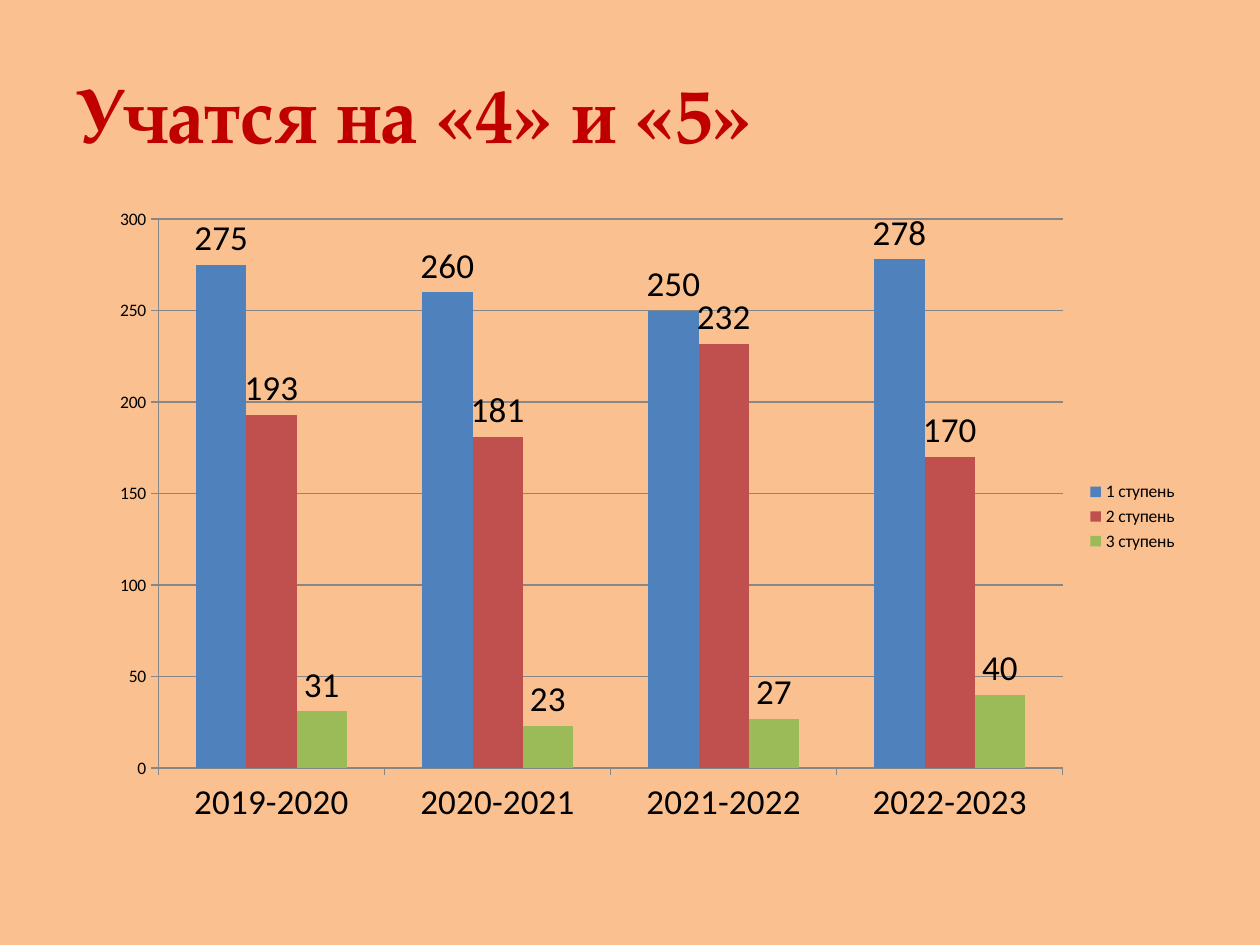
from pptx import Presentation
from pptx.chart.data import CategoryChartData
from pptx.dml.color import RGBColor
from pptx.enum.chart import XL_CHART_TYPE, XL_LABEL_POSITION, XL_LEGEND_POSITION, XL_TICK_MARK
from pptx.enum.text import MSO_ANCHOR, PP_ALIGN
from pptx.util import Inches, Pt

COLORS = {
    "background": "FAC090",
    "title": "C00000",
    "text": "000000",
    "axis": "878787",
}
YEARS = ["2019-2020", "2020-2021", "2021-2022", "2022-2023"]
STAGES = [
    ("1 ступень", [275, 260, 250, 278], "4F81BD"),
    ("2 ступень", [193, 181, 232, 170], "C0504D"),
    ("3 ступень", [31, 23, 27, 40], "9BBB59"),
]


def rgb(name):
    return RGBColor.from_string(COLORS[name])


def set_font(font, name, size, color, bold=False):
    font.name = name
    font.size = Pt(size)
    font.bold = bold
    font.color.rgb = rgb(color)


def place_title(slide, text, left, top, width, height):
    title = slide.shapes.title
    title.left, title.top, title.width, title.height = left, top, width, height
    frame = title.text_frame
    frame.text = text
    frame.word_wrap = True
    frame.vertical_anchor = MSO_ANCHOR.MIDDLE
    paragraph = frame.paragraphs[0]
    paragraph.alignment = PP_ALIGN.LEFT
    set_font(paragraph.font, "TeX Gyre Pagella", 44.1, "title", bold=True)


def format_axis(axis, size):
    axis.major_tick_mark = XL_TICK_MARK.OUTSIDE
    axis.minor_tick_mark = XL_TICK_MARK.NONE
    axis.format.line.color.rgb = rgb("axis")
    set_font(axis.tick_labels.font, "Calibri", size, "text")


def format_series(series, color):
    series.format.fill.solid()
    series.format.fill.fore_color.rgb = RGBColor.from_string(color)
    series.invert_if_negative = False
    labels = series.data_labels
    labels.show_value = True
    labels.position = XL_LABEL_POSITION.OUTSIDE_END
    set_font(labels.font, "Calibri", 20, "text")


def add_stage_chart(slide, left, top, width, height):
    data = CategoryChartData()
    data.categories = YEARS
    for name, values, _ in STAGES:
        data.add_series(name, values)
    chart = slide.shapes.add_chart(
        XL_CHART_TYPE.COLUMN_CLUSTERED, left, top, width, height, data
    ).chart
    chart.has_title = False
    set_font(chart.font, "Calibri", 10, "text")

    format_axis(chart.category_axis, 20)
    format_axis(chart.value_axis, 10)
    chart.value_axis.minimum_scale = 0
    chart.value_axis.maximum_scale = 300
    chart.value_axis.major_unit = 50
    chart.value_axis.has_major_gridlines = True
    chart.value_axis.major_gridlines.format.line.color.rgb = rgb("axis")

    plot = chart.plots[0]
    plot.gap_width = 150
    plot.overlap = 0
    plot.vary_by_categories = False
    for series, (_, _, color) in zip(plot.series, STAGES):
        format_series(series, color)

    chart.has_legend = True
    chart.legend.position = XL_LEGEND_POSITION.RIGHT
    chart.legend.include_in_layout = False


def main():
    presentation = Presentation()
    presentation.slide_width = Inches(10)
    presentation.slide_height = Inches(7.5)
    slide = presentation.slides.add_slide(presentation.slide_layouts[5])
    slide.background.fill.solid()
    slide.background.fill.fore_color.rgb = rgb("background")
    place_title(slide, "Учатся на «4» и «5»",
                Inches(0.5), Inches(0.62), Inches(9), Inches(0.55))
    add_stage_chart(slide, Inches(0.78), Inches(1.56), Inches(8.67), Inches(5.08))
    presentation.save("out.pptx")


if __name__ == "__main__":
    main()
